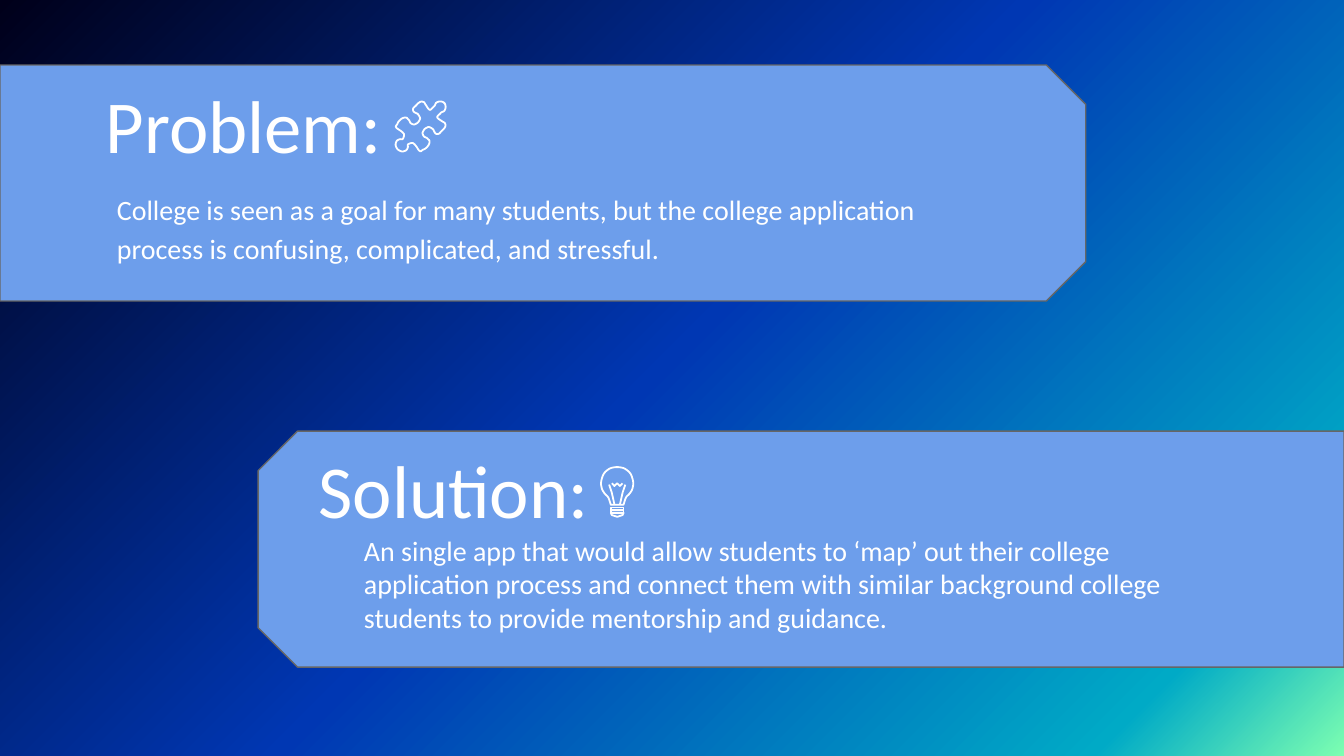
"""Build a slide that sets a problem banner against a solution banner."""
from dataclasses import dataclass

from lxml.etree import SubElement
from pptx import Presentation
from pptx.dml.color import RGBColor
from pptx.enum.shapes import MSO_SHAPE as Preset
from pptx.oxml.ns import qn
from pptx.util import Cm, Pt


@dataclass(frozen=True)
class Theme:
    font: str = "Calibri"
    heading_size: float = 40
    body_size: float = 15
    text: str = "FFFFFF"
    banner: str = "6D9EEB"
    border: str = "666666"
    border_width: float = 0.75
    icon_width: float = 0.96
    gradient: tuple = ((0, "7DFFB1"), (12, "00AAC6"), (51, "0037B3"), (100, "00001A"))


PUZZLE_HALF = [
    (35.5, 0.5), (34, 0), (32, 0), (30, 1), (29, 3), (28, 4), (26, 6), (25, 6),
    (24, 5), (22, 2), (21, 0.5), (19, 0), (17, 1), (15, 3), (13, 5), (13, 7),
    (14, 8), (16, 9), (17, 10), (18, 12), (18, 13), (17, 15), (16, 16), (14, 17),
    (13, 17), (11, 16), (10, 14), (9, 13), (8, 12), (6, 12), (4, 13), (2, 15),
    (1, 17), (0, 18.5), (1, 20), (4, 22), (6, 24), (6, 26), (5, 28), (3, 28),
    (1, 29), (0, 31), (0, 33), (1, 35),
]
BULB_HALF = [
    (7.25, 28), (6, 24), (5, 22), (3, 20), (1, 17), (0.2, 14), (0, 12),
    (0.5, 9), (2, 5), (5, 2), (8, 0.5), (12, 0),
]
FILAMENT = [(10, 28), (8, 19), (6, 13)]
ZIGZAG = [(8, 12), (10, 14), (12, 12), (14, 14), (16, 12)]
CAP = [(7.25, 34), (8, 35.7), (12, 37), (16, 35.7), (16.75, 34)]


def mirror(points):
    return [(24 - x, y) for x, y in reversed(points)]


def smooth(points, steps=4):
    padded = [points[0], *points, points[-1]]
    curve = []
    for a, b, c, d in zip(padded, padded[1:], padded[2:], padded[3:]):
        for step in range(steps):
            t = step / steps
            curve.append(tuple(
                q + t * (r - p + t * (2 * p - 5 * q + 4 * r - s + t * (3 * q - p - 3 * r + s))) / 2
                for p, q, r, s in zip(a, b, c, d)
            ))
    return curve + [points[-1]]


def band(top):
    return [(7.25, top), (16.75, top), (16.75, top + 2), (7.25, top + 2)]


def write_text(paragraph, text, *, theme, size, spacing=None):
    run = paragraph.add_run()
    run.text = text
    run.font.name = theme.font
    run.font.size = Pt(size)
    run.font.color.rgb = RGBColor.from_string(theme.text)
    if spacing:
        paragraph.line_spacing = spacing


class SlideBuilder:
    def __init__(self, slide, theme):
        self.slide = slide
        self.theme = theme

    def background(self):
        fill = self.slide.background.fill
        fill.gradient()
        fill.gradient_angle = 135
        stops = next(self.slide.element.iter(qn("a:gsLst")))
        for stop in list(stops):
            stops.remove(stop)
        for position, color in self.theme.gradient:
            stop = SubElement(stops, qn("a:gs"), pos=str(position * 1000))
            SubElement(stop, qn("a:srgbClr"), val=color)

    def outline(self, shape, color, width):
        shape.shadow.inherit = False
        shape.line.color.rgb = RGBColor.from_string(color)
        shape.line.width = Pt(width)

    def banner(self, left, top, rotation, width=20.52, height=4.46):
        shift = (width - height) / 2
        shape = self.slide.shapes.add_shape(
            Preset.SNIP_2_SAME_RECTANGLE,
            Cm(left + shift), Cm(top - shift), Cm(height), Cm(width),
        )
        shape.rotation = rotation
        shape.adjustments[0] = 0.167
        shape.adjustments[1] = 0
        shape.fill.solid()
        shape.fill.fore_color.rgb = RGBColor.from_string(self.theme.banner)
        self.outline(shape, self.theme.border, self.theme.border_width)

    def text(self, text, left, top, width, height, **style):
        frame = self.slide.shapes.add_textbox(Cm(left), Cm(top), Cm(width), Cm(height)).text_frame
        frame.word_wrap = True
        frame.margin_left = frame.margin_right = Cm(0.25)
        frame.margin_top = frame.margin_bottom = Cm(0.25)
        write_text(frame.paragraphs[0], text, theme=self.theme, **style)

    def icon(self, left, top, strokes):
        shapes = self.slide.shapes
        if len(strokes) > 1:
            shapes = shapes.add_group_shape().shapes
        for points, closed in strokes:
            start, *rest = [(x * 100, y * 100) for x, y in points]
            builder = shapes.build_freeform(*start, scale=Cm(2.54) / 10000)
            builder.add_line_segments(rest, close=closed)
            shape = builder.convert_to_shape(Cm(left), Cm(top))
            shape.fill.background()
            self.outline(shape, self.theme.text, self.theme.icon_width)


def main():
    presentation = Presentation()
    presentation.slide_width, presentation.slide_height = Cm(25.4), Cm(14.29)
    theme = Theme()
    slide = SlideBuilder(presentation.slides.add_slide(presentation.slide_layouts[6]), theme)
    heading = {"size": theme.heading_size}
    body = {"size": theme.body_size}

    slide.background()
    slide.banner(0, 1.23, 90)
    slide.text("Problem:", 1.75, 1.24, 21.69, 2.31, **heading)
    slide.banner(4.88, 8.15, 270)
    slide.text("Solution:", 5.77, 8.15, 21.06, 2.31, **heading)
    slide.text(
        "College is seen as a goal for many students, but the college application "
        "process is confusing, complicated, and stressful.",
        1.96, 3.3, 17.07, 2.18, spacing=1.15, **body,
    )
    slide.text(
        "An single app that would allow students to ‘map’ out their college "
        "application process and connect them with similar background college "
        "students to provide mentorship and guidance.",
        6.63, 9.83, 16.64, 2.31, **body,
    )

    bulb = smooth(BULB_HALF + mirror(BULB_HALF)[1:])
    slide.icon(11.36, 8.83, [
        (band(32), True),
        (band(30), True),
        (CAP, True),
        (FILAMENT, False),
        (bulb, True),
        (mirror(FILAMENT), False),
        (ZIGZAG, False),
    ])
    puzzle = PUZZLE_HALF + [(37 - y, 37 - x) for x, y in reversed(PUZZLE_HALF)]
    slide.icon(7.48, 1.92, [(smooth(puzzle), True)])
    presentation.save("out.pptx")


if __name__ == "__main__":
    main()
